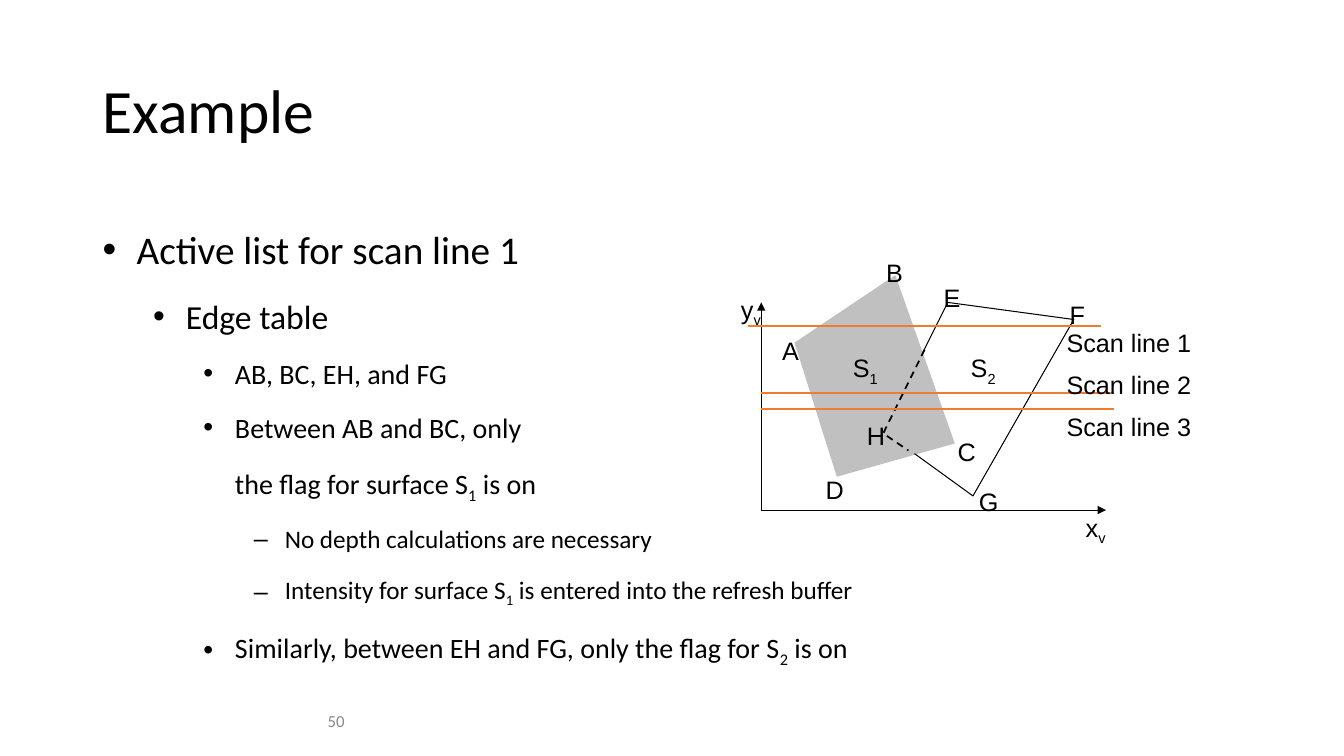
"""Build a slide on the active edge list for a scan line."""
from dataclasses import dataclass

from lxml import etree
from pptx import Presentation
from pptx.dml.color import RGBColor
from pptx.enum.dml import MSO_LINE
from pptx.enum.shapes import MSO_CONNECTOR
from pptx.enum.text import MSO_ANCHOR, MSO_AUTO_SIZE, PP_ALIGN
from pptx.oxml.ns import qn
from pptx.util import Inches, Pt

STRAIGHT = MSO_CONNECTOR.STRAIGHT
DASH = MSO_LINE.DASH
MIDDLE, TOP = MSO_ANCHOR.MIDDLE, MSO_ANCHOR.TOP
CENTER = PP_ALIGN.CENTER
GROW = MSO_AUTO_SIZE.SHAPE_TO_FIT_TEXT


@dataclass(frozen=True)
class Theme:
    """Colours, fonts and type sizes of the slide."""
    ink: RGBColor = RGBColor(0, 0, 0)
    muted: RGBColor = RGBColor(0x89, 0x89, 0x89)
    gray: RGBColor = RGBColor(0xC0, 0xC0, 0xC0)
    scan: RGBColor = RGBColor(0xED, 0x7D, 0x31)
    prose: str = "Calibri"
    tag: str = "Arial"
    title: int = 44
    levels: tuple = (28, 24, 20, 18)
    label: int = 18
    foot: int = 12


THEME = Theme()

POINTS = (
    (0, "•", [" Active list for scan line 1"]),
    (1, "•", [" Edge table"]),
    (2, "•", [" AB, BC, EH, and FG"]),
    (2, "•", [" Between AB and BC, only"]),
    (2, None, [" the flag for surface S", "1", " is on"]),
    (3, "–", [" No depth calculations are necessary"]),
    (3, "–", [" Intensity for surface S", "1",
              " is entered into the refresh buffer"]),
    (2, "•", [" Similarly, between EH and FG, only the flag for S", "2",
              " is on"]),
)

LABELS = (
    (10.67, 5.03, 0.41, ["x", "v"]),
    (7.25, 2.87, 0.41, ["y", "v"]),
    (7.66, 3.28, 0.37, ["A"]),
    (8.69, 2.5, 0.37, ["B"]),
    (8.36, 3.45, 0.46, ["S", "1"]),
    (9.26, 2.75, 0.37, ["E"]),
    (10.51, 2.92, 0.36, ["F"]),
    (9.53, 3.45, 0.46, ["S", "2"]),
    (8.5, 4.12, 0.38, ["H"]),
    (8.09, 4.66, 0.38, ["D"]),
    (9.4, 4.28, 0.38, ["C"]),
    (9.61, 4.78, 0.4, ["G"]),
)

SCANS = ((7.42, 3.23), (7.55, 3.9), (7.55, 4.06))


def add_runs(para, parts, size, font, color):
    """Add text parts in turn, every second one as a subscript."""
    for i, part in enumerate(parts):
        run = para.add_run()
        run.text = part
        run.font.size = Pt(size)
        run.font.name = font
        run.font.color.rgb = color
        if i % 2:
            run._r.get_or_add_rPr().set("baseline", "-25000")


def add_box(slide, left, top, width, height, anchor=TOP, wrap=True):
    """Add an empty text box and return its frame."""
    box = slide.shapes.add_textbox(
        Inches(left), Inches(top), Inches(width), Inches(height))
    frame = box.text_frame
    frame.word_wrap = wrap
    frame.vertical_anchor = anchor
    return frame


def add_label(slide, left, top, width, parts):
    """Add a label of the diagram."""
    frame = add_box(slide, left, top, width, 0.4, wrap=False)
    frame.auto_size = GROW
    add_runs(frame.paragraphs[0], parts, THEME.label, THEME.tag, THEME.ink)


def set_bullet(para, level, mark):
    """Set the indent of a paragraph and its bullet, if any."""
    props = para._p.get_or_add_pPr()
    props.set("marL", str(Inches(0.25 + 0.5 * level)))
    props.set("indent", str(Inches(-0.25 if mark else 0)))
    if mark:
        etree.SubElement(props, qn("a:buFont")).set("typeface", THEME.tag)
        etree.SubElement(props, qn("a:buChar")).set("char", mark)
    else:
        etree.SubElement(props, qn("a:buNone"))


def add_points(slide):
    """Add the bulleted list."""
    frame = add_box(slide, 0.92, 2, 11.5, 4.76)
    for i, (level, mark, parts) in enumerate(POINTS):
        para = frame.add_paragraph() if i else frame.paragraphs[0]
        para.level = level
        para.line_spacing = 1.4
        para.space_before = Pt(5 if level else 10)
        set_bullet(para, level, mark)
        add_runs(para, parts, THEME.levels[level], THEME.prose, THEME.ink)


def add_line(slide, start, end, color, width, arrow=False):
    """Add a straight line, with an arrowhead at its end if asked."""
    line = slide.shapes.add_connector(
        STRAIGHT, *(Inches(n) for n in (*start, *end)))
    line.line.color.rgb = color
    line.line.width = Pt(width)
    if arrow:
        tail = etree.SubElement(line.line._get_or_add_ln(), qn("a:tailEnd"))
        tail.set("type", "triangle")
    etree.SubElement(line._element.spPr, qn("a:effectLst"))


def add_path(shapes, points, fill=None, width=0, dash=None):
    """Add a filled closed outline, or an open stroked one."""
    first, *rest = [(Inches(x), Inches(y)) for x, y in points]
    pen = shapes.build_freeform(*first)
    pen.add_line_segments(rest, close=fill is not None)
    shape = pen.convert_to_shape()
    shape.shadow.inherit = False
    if fill is not None:
        shape.fill.solid()
        shape.fill.fore_color.rgb = fill
        shape.line.fill.background()
    else:
        shape.fill.background()
        shape.line.color.rgb = THEME.ink
        shape.line.width = Pt(width)
        shape.line.dash_style = dash


def add_graph(slide):
    """Add the axes, both surfaces, the scan lines and the labels."""
    origin = (7.55, 5.06)
    for tip in ((7.55, 3), (10.97, 5.06)):
        add_line(slide, origin, tip, THEME.ink, 0.75, arrow=True)
    add_path(slide.shapes, [(8.88, 2.73), (7.88, 3.4), (8.3, 4.73),
                            (9.47, 4.4)], fill=THEME.gray)
    group = slide.shapes.add_group_shape().shapes
    add_path(group, [(9.15, 3.5), (9.4, 3), (10.65, 3.17), (9.65, 4.92),
                     (9.07, 4.5)], width=0.75)
    add_path(group, [(9.17, 3.47), (8.76, 4.3), (9.01, 4.47)],
             width=1.25, dash=DASH)
    for x, y in SCANS:
        add_line(slide, (x, y), (x + 3.5, y), THEME.scan, 1.5)
    for label in LABELS:
        add_label(slide, *label)
    for i in range(len(SCANS)):
        add_label(slide, 10.48, 3.2 + 0.415 * i, 1.45, [f"Scan line {i + 1}"])


def main():
    """Build the slide and save it."""
    deck = Presentation()
    deck.slide_width, deck.slide_height = Inches(13.33), Inches(7.5)
    slide = deck.slides.add_slide(deck.slide_layouts[6])
    head = add_box(slide, 0.92, 0.4, 11.5, 1.45, MIDDLE).paragraphs[0]
    head.line_spacing = 0.9
    add_runs(head, ["Example"], THEME.title, THEME.prose, THEME.ink)
    add_points(slide)
    foot = add_box(slide, 2.17, 6.95, 2.33, 0.4, MIDDLE).paragraphs[0]
    foot.alignment = CENTER
    add_runs(foot, ["50"], THEME.foot, THEME.prose, THEME.muted)
    add_graph(slide)
    deck.save("out.pptx")


if __name__ == "__main__":
    main()
